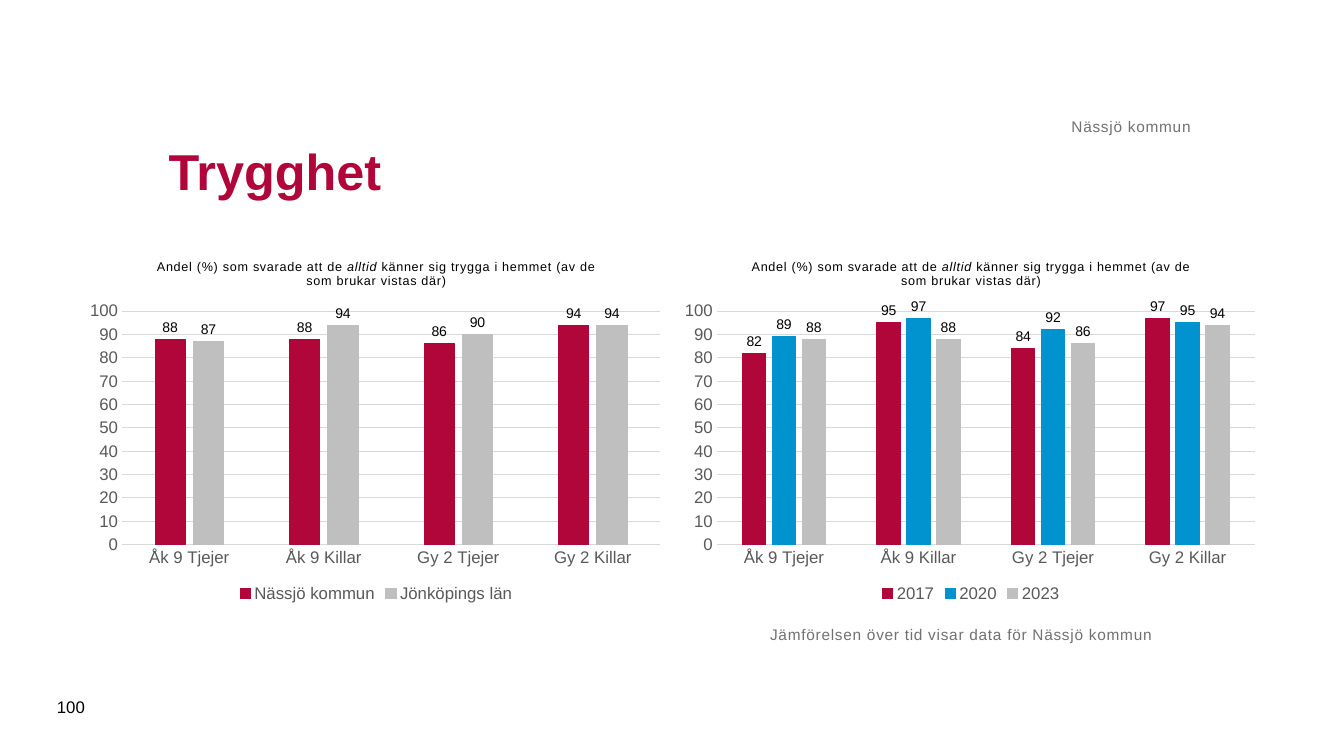
from lxml import etree
from pptx import Presentation
from pptx import util as u
from pptx.chart.data import CategoryChartData
from pptx.dml.color import RGBColor
from pptx.enum import chart as ch, text
from pptx.oxml import parse_xml
from pptx.oxml.ns import nsdecls

WIDTH, HEIGHT = 13.33, 7.5
FONT = "Arial"
COLORS = {"red": "B1063A", "blue": "0093D0", "silver": "BFBFBF", "grid": "D9D9D9",
          "axis": "595959", "note": "717171", "black": "000000"}
NUMBER = "#,##0;#,##0"
GROUPS = ["Åk 9 Tjejer", "Åk 9 Killar", "Gy 2 Tjejer", "Gy 2 Killar"]
QUESTION = [("Andel (%) som svarade att de ", False), ("alltid", True),
            (" känner sig trygga i hemmet (av de som brukar vistas där)", False)]
# Inner plot area as shares of the chart
PLOT = {"x": 0.07, "y": 0.19, "w": 0.91, "h": 0.64}


def rgb(name):
    return RGBColor.from_string(COLORS[name])


def box(left, top, width, height):
    """Turn shares of the slide's size into lengths."""
    return (u.Inches(left * WIDTH), u.Inches(top * HEIGHT),
            u.Inches(width * WIDTH), u.Inches(height * HEIGHT))


def style(font, size, color, bold=False):
    font.name, font.size, font.bold = FONT, u.Pt(size), bold
    font.color.rgb = rgb(color)


def set_spacing(r, points):
    r._r.get_or_add_rPr().set("spc", str(int(points * 100)))


def add_label(slide, words, place, size, color, bold=False, spacing=0, inset=True,
              anchor=text.MSO_ANCHOR.MIDDLE, align=text.PP_ALIGN.LEFT):
    tf = slide.shapes.add_textbox(*box(*place)).text_frame
    tf.word_wrap, tf.vertical_anchor = True, anchor
    if not inset:
        tf.margin_left = tf.margin_right = tf.margin_top = tf.margin_bottom = 0
    p = tf.paragraphs[0]
    p.alignment = align
    r = p.add_run()
    r.text = words
    style(r.font, size, color, bold)
    set_spacing(r, spacing)


def add_chart_title(chart):
    p = chart.chart_title.text_frame.paragraphs[0]
    for words, italic in QUESTION:
        r = p.add_run()
        r.text = words
        style(r.font, 9, "black")
        r.font.italic = italic
        set_spacing(r, 0.5)
    chart.chart_title.include_in_layout = False


def place_plot(chart):
    area = chart._chartSpace.chart.plotArea
    for old in area.findall("{*}layout"):
        area.remove(old)
    layout = parse_xml(f'<c:layout {nsdecls("c")}><c:manualLayout/></c:layout>')
    settings = {"layoutTarget": "inner", "xMode": "edge", "yMode": "edge", **PLOT}
    for name, value in settings.items():
        tag = etree.QName(layout.nsmap["c"], name)
        etree.SubElement(layout[0], tag).set("val", str(value))
    area.insert(0, layout)


def style_axes(chart):
    for axis in (chart.category_axis, chart.value_axis):
        axis.major_tick_mark = axis.minor_tick_mark = ch.XL_TICK_MARK.NONE
        style(axis.tick_labels.font, 12, "axis")
    values = chart.value_axis
    values.minimum_scale, values.maximum_scale, values.major_unit = 0, 100, 10
    values.tick_labels.number_format = NUMBER
    values.tick_labels.number_format_is_linked = False
    values.format.line.fill.background()
    for line in (chart.category_axis.format.line, values.major_gridlines.format.line):
        line.color.rgb, line.width = rgb("grid"), u.Pt(0.75)


def style_series(series, color):
    series.format.fill.solid()
    series.format.fill.fore_color.rgb = rgb(color)
    series.format.line.color.rgb = rgb(color)
    series.format.line.width = u.Pt(0.75)
    labels = series.data_labels
    labels.show_value = True
    labels.position = ch.XL_LABEL_POSITION.OUTSIDE_END
    labels.number_format, labels.number_format_is_linked = NUMBER, False
    style(labels.font, 10, "black")


def add_columns(slide, place, rows):
    data = CategoryChartData(number_format=NUMBER)
    data.categories = GROUPS
    for name, _, values in rows:
        data.add_series(name, values)
    chart = slide.shapes.add_chart(ch.XL_CHART_TYPE.COLUMN_CLUSTERED, *box(*place), data).chart
    style(chart.font, 10, "black")
    add_chart_title(chart)
    place_plot(chart)
    style_axes(chart)
    plot = chart.plots[0]
    plot.gap_width, plot.overlap, plot.vary_by_categories = 219, -27, False
    for series, (_, color, _) in zip(plot.series, rows):
        style_series(series, color)
    chart.has_legend = True
    chart.legend.position = ch.XL_LEGEND_POSITION.BOTTOM
    chart.legend.include_in_layout = False
    style(chart.legend.font, 12, "axis")


def main():
    prs = Presentation()
    prs.slide_width, prs.slide_height = u.Inches(WIDTH), u.Inches(HEIGHT)
    slide = prs.slides.add_slide(prs.slide_layouts[6])

    # Two charts side by side: by area and over time
    comparisons = [
        [("Nässjö kommun", "red", (88, 88, 86, 94)),
         ("Jönköpings län", "silver", (87, 94, 90, 94))],
        [("2017", "red", (82, 95, 84, 97)),
         ("2020", "blue", (89, 97, 92, 95)),
         ("2023", "silver", (88, 88, 86, 94))],
    ]
    chart_width = 0.44
    for column, rows in enumerate(comparisons):
        add_columns(slide, (0.06 + column * 0.4425, 0.32, chart_width, 0.4827), rows)

    # Heading, notes and page number
    add_label(slide, "Trygghet", (0.118, 0.131, 0.768, 0.189), 36, "red", bold=True)
    add_label(slide, "Jämförelsen över tid visar data för Nässjö kommun",
              (0.573, 0.827, 0.398, 0.125), 11, "note", spacing=0.5, inset=False,
              anchor=text.MSO_ANCHOR.TOP)
    add_label(slide, "Nässjö kommun", (0.118, 0.083, 0.768, 0.097), 11, "note",
              spacing=0.5, inset=False, anchor=text.MSO_ANCHOR.BOTTOM,
              align=text.PP_ALIGN.RIGHT)
    add_label(slide, "100", (0.035, 0.908, 0.043, 0.053), 12, "black")

    prs.save("out.pptx")


if __name__ == "__main__":
    main()
